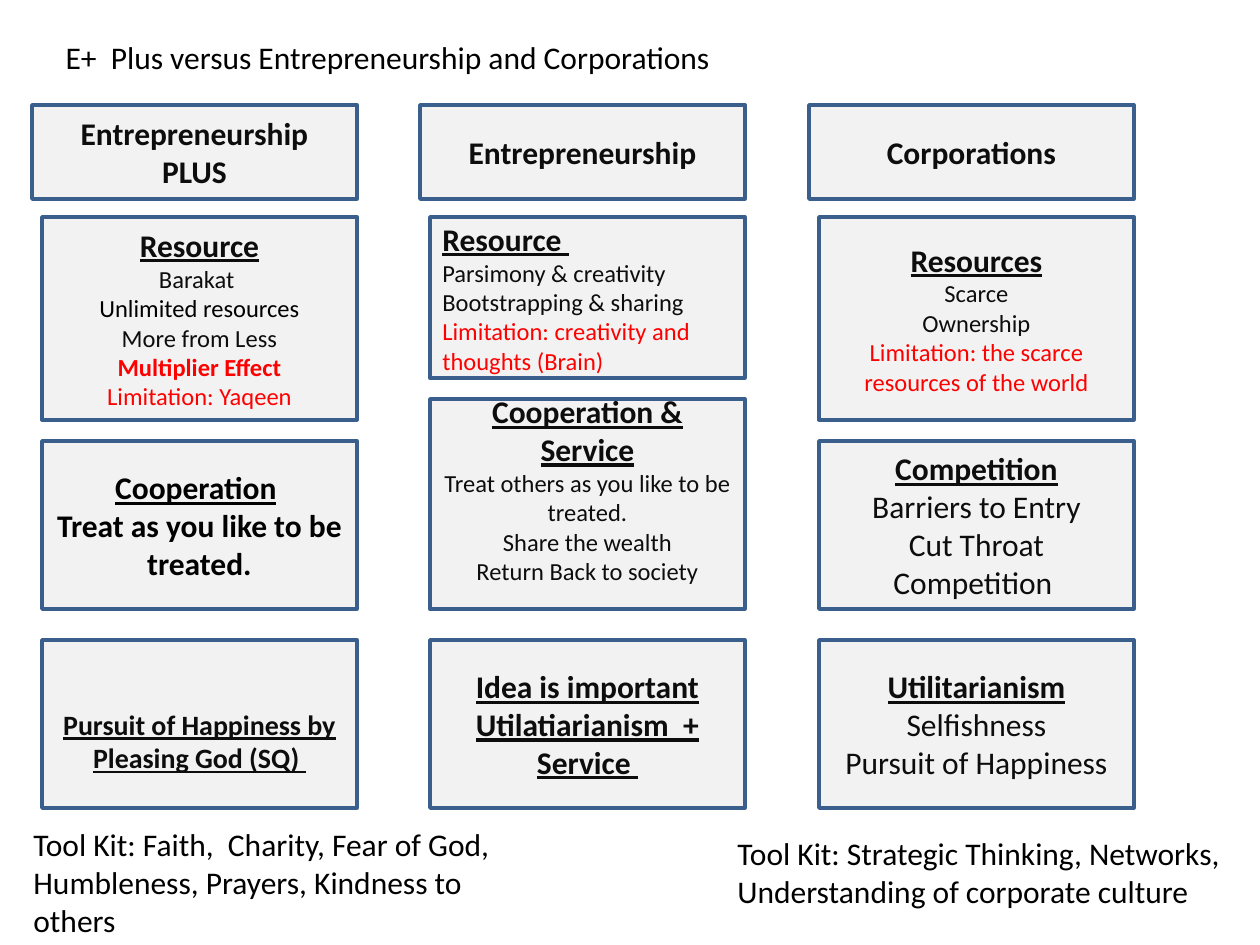
"""Build a slide comparing Entrepreneurship Plus, entrepreneurship and corporations."""
from dataclasses import dataclass

from pptx import Presentation
from pptx.dml.color import RGBColor
from pptx.enum.shapes import MSO_SHAPE
from pptx.enum.text import MSO_ANCHOR, MSO_AUTO_SIZE, PP_ALIGN
from pptx.util import Inches, Pt


@dataclass(frozen=True)
class Theme:
    font: str = "Calibri"
    ink: str = "0D0D0D"
    black: str = "000000"
    red: str = "FF0000"
    panel: str = "F2F2F2"
    border: str = "3A5F8C"
    large: int = 18
    medium: int = 16
    small: int = 14
    outline: int = 2


theme = Theme()


def px(length):
    return Inches(length / 126)


def write(paragraph, text, size=theme.large, color=theme.ink, bold=False, underline=False,
          align=PP_ALIGN.LEFT):
    paragraph.alignment = align
    run = paragraph.add_run()
    run.text = text
    run.font.name = theme.font
    run.font.size = Pt(size)
    run.font.bold = bold
    run.font.underline = underline
    run.font.color.rgb = RGBColor.from_string(color)


header = dict(bold=True)
heading = dict(bold=True, underline=True)
black_heading = dict(heading, color=theme.black)
black_bold = dict(bold=True, color=theme.black)
medium_heading = dict(heading, size=theme.medium)
large = dict()
small = dict(size=theme.small)
small_black = dict(small, color=theme.black)
limit = dict(small, color=theme.red)
strong_limit = dict(limit, bold=True)

center, left = PP_ALIGN.CENTER, PP_ALIGN.LEFT
resource_row, second_row, third_row = (217, 203), (441, 168), (640, 168)
inset = 6

# Each panel: top and height, top inset, bottom inset, alignment, paragraphs of runs.
columns = [
    (
        [[("Entrepreneurship", header)], [("PLUS", header)]],
        [
            (resource_row, inset, inset, center, [
                [("Resource", heading)],
                [("Barakat ", small)],
                [("Unlimited resources", small_black)],
                [("More from Less", small)],
                [("Multiplier Effect", strong_limit)],
                [("Limitation: Yaqeen", limit)],
            ]),
            (second_row, inset, inset, center, [
                [("Cooperation", black_heading), (" ", black_bold)],
                [("Treat as you like to be treated.", black_bold)],
            ]),
            (third_row, 40, inset, center, [
                [("Pursuit of Happiness by Pleasing God (SQ) ", medium_heading)],
            ]),
        ],
    ),
    (
        [[("Entrepreneurship", header)]],
        [
            ((217, 161), inset, inset, left, [
                [("Resource ", heading)],
                [("Parsimony & creativity", small)],
                [("Bootstrapping & sharing", small)],
                [("Limitation: creativity and thoughts (Brain)", limit)],
            ]),
            ((399, 210), inset, 36, center, [
                [("Cooperation & Service", heading)],
                [("Treat others as you like to be treated.", small)],
                [("Share the wealth", small)],
                [("Return Back to society", small)],
            ]),
            (third_row, inset, inset, center, [
                [("Idea is important Utilatiarianism  + Service ", heading)],
            ]),
        ],
    ),
    (
        [[("Corporations", header)]],
        [
            (resource_row, inset, inset, center, [
                [("Resources", heading)],
                [("Scarce", small)],
                [("Ownership", small)],
                [("Limitation: the scarce resources of the world", limit)],
            ]),
            (second_row, inset, inset, center, [
                [("Competition", heading)],
                [("Barriers to Entry", large)],
                [("Cut Throat Competition ", large)],
            ]),
            (third_row, inset, inset, center, [
                [("Utilitarianism", heading)],
                [("Selfishness", large)],
                [("Pursuit of Happiness", large)],
            ]),
        ],
    ),
]

presentation = Presentation()
presentation.slide_width = px(1260)
presentation.slide_height = px(945)
slide = presentation.slides.add_slide(presentation.slide_layouts[5])

title = slide.shapes.title
title.left, title.top, title.width, title.height = px(53), px(32), px(1144), px(50)
title.text_frame.auto_size = MSO_AUTO_SIZE.NONE
title.text_frame.vertical_anchor = MSO_ANCHOR.TOP
write(title.text_frame.paragraphs[0], "E+  Plus versus Entrepreneurship and Corporations",
      color=theme.black)

for column, (header_lines, panels) in enumerate(columns):
    panel_left = 42 + round(column * 388.5)
    boxes = [(panel_left - 10, 325, ((105, 94), inset, inset, center, header_lines))]
    boxes += [(panel_left, 315, panel) for panel in panels]
    for box_left, width, ((top, height), top_inset, bottom_inset, align, lines) in boxes:
        shape = slide.shapes.add_shape(MSO_SHAPE.RECTANGLE, px(box_left), px(top),
                                       px(width), px(height))
        shape.shadow.inherit = False
        shape.fill.solid()
        shape.fill.fore_color.rgb = RGBColor.from_string(theme.panel)
        shape.line.color.rgb = RGBColor.from_string(theme.border)
        shape.line.width = Pt(theme.outline)
        frame = shape.text_frame
        frame.word_wrap = True
        frame.vertical_anchor = MSO_ANCHOR.MIDDLE
        frame.margin_top, frame.margin_bottom = px(top_inset), px(bottom_inset)
        for index, runs in enumerate(lines):
            paragraph = frame.add_paragraph() if index else frame.paragraphs[0]
            for text, style in runs:
                write(paragraph, text, align=align, **style)

tool_kits = [
    (21, 819, 525,
     "Tool Kit: Faith,  Charity, Fear of God, Humbleness, Prayers, Kindness to others"),
    (725, 828, 535,
     "Tool Kit: Strategic Thinking, Networks, Understanding of corporate culture"),
]
for box_left, top, width, text in tool_kits:
    text_box = slide.shapes.add_textbox(px(box_left), px(top), px(width), px(127))
    text_box.text_frame.word_wrap = True
    write(text_box.text_frame.paragraphs[0], text, color=theme.black)

presentation.save("out.pptx")
